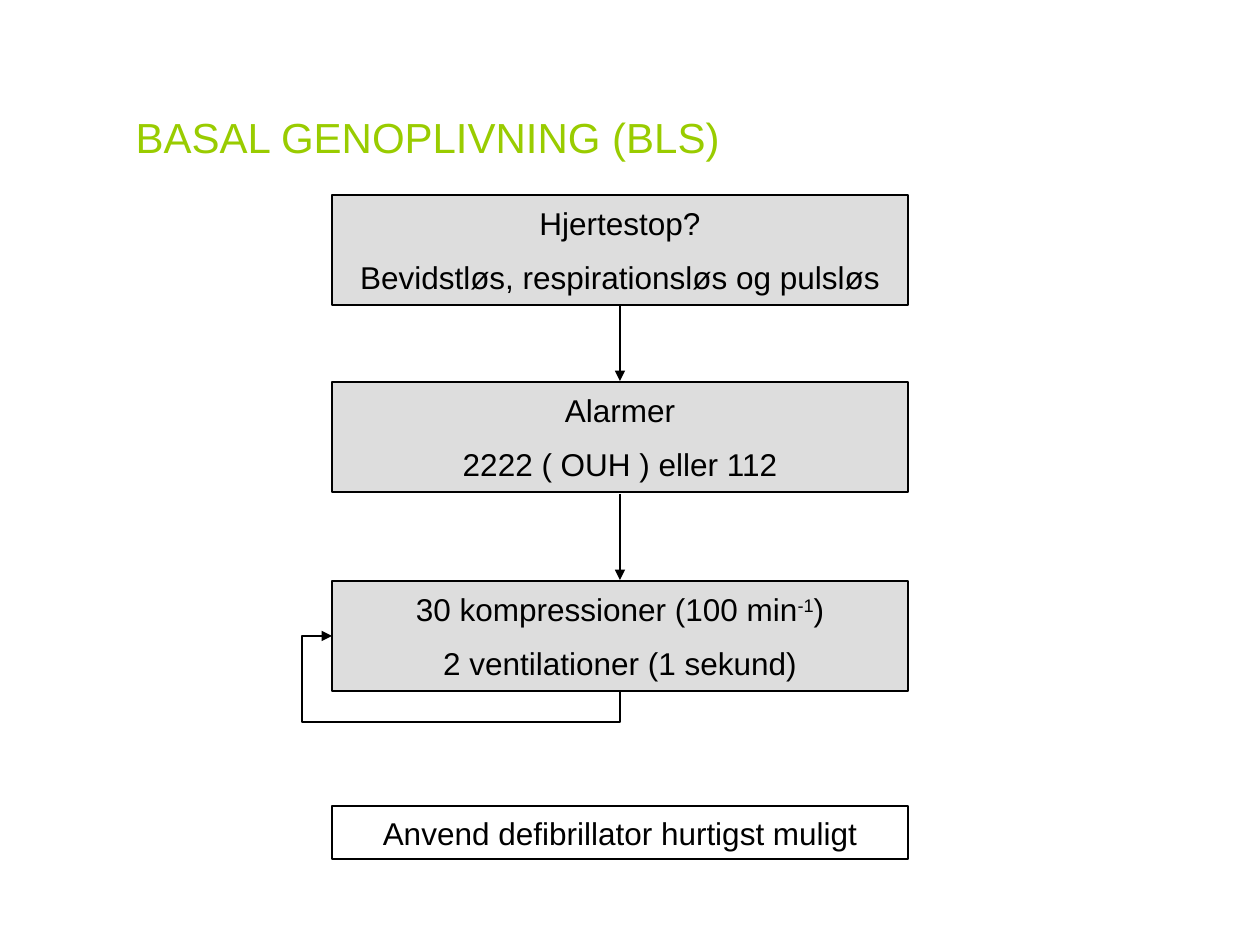
"""Build the basic life support flowchart slide."""
from lxml import etree
from pptx import Presentation
from pptx import util as u
from pptx.dml.color import RGBColor
from pptx.enum import shapes, text
from pptx.oxml.ns import qn

PX = u.Inches(1) / 126


def px(length):
    return u.Emu(round(length * PX))


def rgb(value):
    return RGBColor.from_string(value)


class Flowchart:
    FONT, INK, TITLE, PANEL = "Arial", "000000", "99CC00", "DDDDDD"
    LEFT, WIDTH, MIDDLE = 332, 576, 620

    def __init__(self, slide):
        self.slide = slide

    def format(self, frame, size, color, align):
        for index, paragraph in enumerate(frame.paragraphs):
            paragraph.alignment = align
            paragraph.space_before = u.Pt(9 if index else 0)
            for run in paragraph.runs:
                run.font.name = self.FONT
                run.font.size = u.Pt(size)
                run.font.color.rgb = rgb(color)

    def title(self, words, left, top, width, height):
        heading = self.slide.shapes.title
        heading.left, heading.top = px(left), px(top)
        heading.width, heading.height = px(width), px(height)
        frame = heading.text_frame
        frame.text = words
        frame.auto_size = text.MSO_AUTO_SIZE.NONE
        frame.vertical_anchor = text.MSO_ANCHOR.BOTTOM
        self.format(frame, 24, self.TITLE, text.PP_ALIGN.LEFT)

    def step(self, words, top, height=110, fill=None, raised=()):
        box = self.slide.shapes.add_shape(
            shapes.MSO_SHAPE.RECTANGLE,
            px(self.LEFT), px(top), px(self.WIDTH), px(height))
        box.shadow.inherit = False
        if fill:
            box.fill.solid()
            box.fill.fore_color.rgb = rgb(fill)
        else:
            box.fill.background()
        box.line.color.rgb = rgb(self.INK)
        box.line.width = u.Pt(1.5)
        frame = box.text_frame
        frame.word_wrap = True
        frame.vertical_anchor = text.MSO_ANCHOR.MIDDLE
        frame.text = words
        if raised:
            exponent, rest = raised
            first = frame.paragraphs[0]
            power = first.add_run()
            power.text = exponent
            power._r.get_or_add_rPr().set("baseline", "30000")
            first.add_run().text = rest
        self.format(frame, 18, self.INK, text.PP_ALIGN.CENTER)

    def arrow(self, kind, start, end):
        link = self.slide.shapes.add_connector(
            kind, *map(px, start), *map(px, end))
        link.line.color.rgb = rgb(self.INK)
        link.line.width = u.Pt(1.5)
        outline = link.line._get_or_add_ln()
        etree.SubElement(outline, qn("a:tailEnd"), type="triangle")
        etree.SubElement(link._element.spPr, qn("a:effectLst"))
        return link

    def down(self, top, bottom):
        self.arrow(shapes.MSO_CONNECTOR.STRAIGHT,
                   (self.MIDDLE, top), (self.MIDDLE, bottom))

    def loop(self, bottom, side, reach):
        rise, run = bottom - side, self.MIDDLE - self.LEFT
        center_x, center_y = self.MIDDLE - run // 2, bottom - rise // 2
        link = self.arrow(
            shapes.MSO_CONNECTOR.ELBOW,
            (center_x - rise // 2, center_y + run // 2),
            (center_x + rise // 2, center_y - run // 2))
        properties = link._element.spPr
        properties.find(qn("a:xfrm")).set("rot", str(270 * 60000))
        geometry = properties.find(qn("a:prstGeom"))
        geometry.set("prst", "bentConnector4")
        guides = geometry.find(qn("a:avLst"))
        for name, share in (("adj1", -reach / rise), ("adj2", 1 + reach / run)):
            etree.SubElement(guides, qn("a:gd"), name=name,
                             fmla=f"val {round(share * 100000)}")


def main():
    deck = Presentation()
    deck.slide_width, deck.slide_height = u.Inches(10), u.Inches(7.5)
    chart = Flowchart(deck.slides.add_slide(deck.slide_layouts[5]))
    chart.title("BASAL GENOPLIVNING (BLS)", 123, 105, 829, 63)
    chart.step("Hjertestop?\nBevidstløs, respirationsløs og pulsløs",
               195, fill=chart.PANEL)
    chart.step("Alarmer\n2222 ( OUH ) eller 112", 382, fill=chart.PANEL)
    chart.step("30 kompressioner (100 min\n2 ventilationer (1 sekund)",
               581, fill=chart.PANEL, raised=("-1", ")"))
    chart.step("Anvend defibrillator hurtigst muligt", 806, height=53)
    chart.down(306, 381)
    chart.down(494, 580)
    chart.loop(bottom=692, side=636, reach=30)
    deck.save("out.pptx")


if __name__ == "__main__":
    main()
